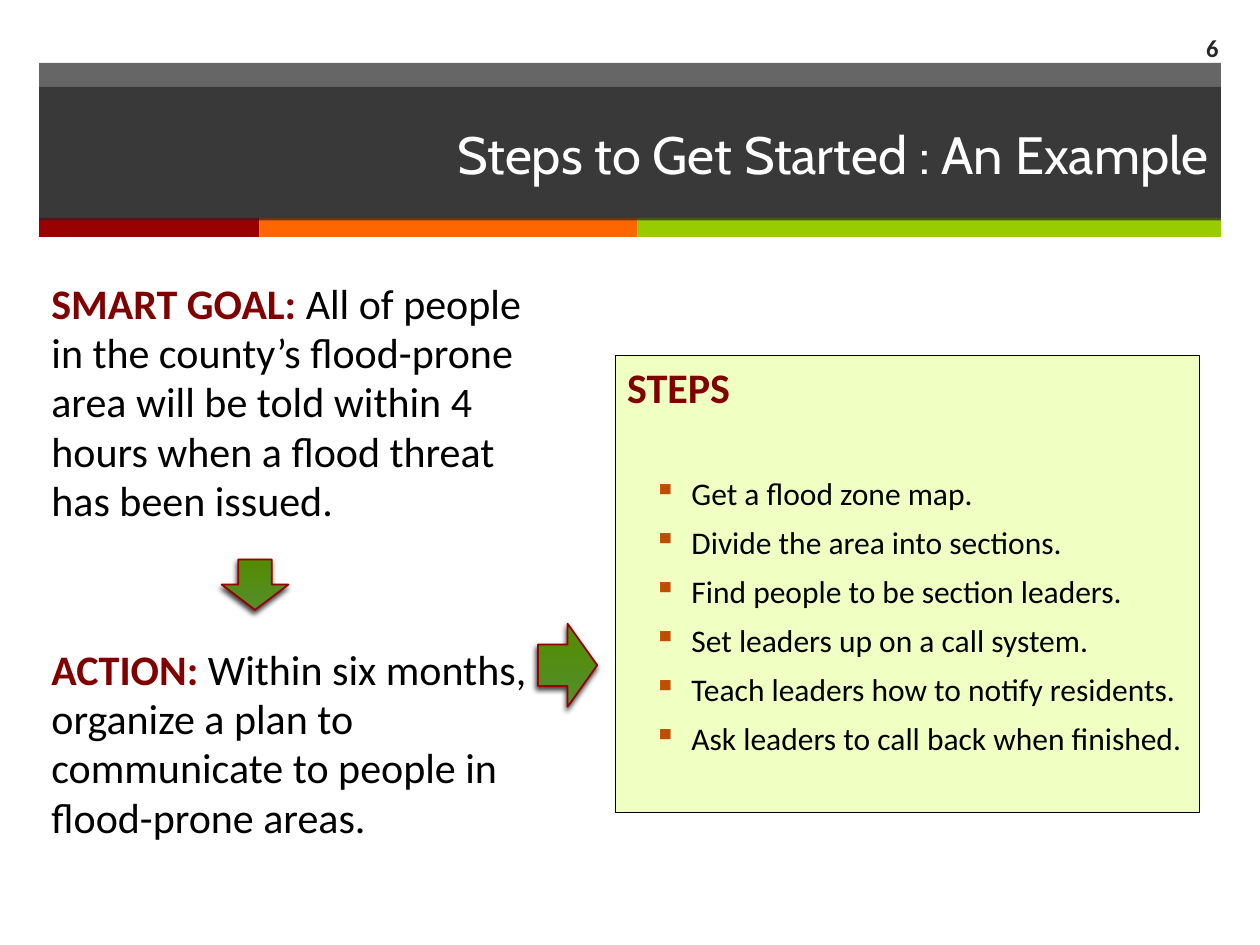
from lxml import etree
from pptx import Presentation
from pptx.dml.color import RGBColor
from pptx.enum.shapes import MSO_SHAPE
from pptx.enum.text import MSO_ANCHOR, PP_ALIGN
from pptx.oxml import parse_xml
from pptx.oxml.ns import qn
from pptx.util import Inches, Pt

RECTANGLE = MSO_SHAPE.RECTANGLE
DOWN_ARROW = MSO_SHAPE.DOWN_ARROW
RIGHT_ARROW = MSO_SHAPE.RIGHT_ARROW
MIDDLE = MSO_ANCHOR.MIDDLE
TOP = MSO_ANCHOR.TOP
LEFT = PP_ALIGN.LEFT
RIGHT = PP_ALIGN.RIGHT
NAMESPACE = "http://schemas.openxmlformats.org/drawingml/2006/main"


def color(value):
    return RGBColor.from_string(value)


def format_run(run, size, value, bold=False, font="Calibri"):
    run.font.name = font
    run.font.size = Pt(size)
    run.font.bold = bold
    run.font.color.rgb = color(value)


presentation = Presentation()
presentation.slide_width = Inches(10)
presentation.slide_height = Inches(7.5)
slide = presentation.slides.add_slide(presentation.slide_layouts[6])
shapes = slide.shapes

bars = [
    (0.31, 0.5, 9.38, 1.24, "262626", 70),
    (0.31, 1.73, 1.75, 0.15, "990000", 100),
    (2.06, 1.73, 3, 0.15, "FF6600", 100),
    (5.06, 1.73, 4.63, 0.15, "99CC00", 100),
    (0.31, 0.69, 9.38, 1.06, "262626", 70),
]
for left, top, width, height, fill, opacity in bars:
    bar = shapes.add_shape(RECTANGLE, Inches(left), Inches(top), Inches(width), Inches(height))
    bar.shadow.inherit = False
    bar.fill.solid()
    bar.fill.fore_color.rgb = color(fill)
    bar.line.fill.background()
    if opacity < 100:
        fill_color = bar._element.spPr.find(qn("a:solidFill"))[0]
        etree.SubElement(fill_color, qn("a:alpha")).set("val", str(opacity * 1000))

title_frame = bar.text_frame
title_frame.text = "Steps to Get Started : An Example"
title_frame.vertical_anchor = MIDDLE
title_frame.paragraphs[0].alignment = RIGHT
format_run(title_frame.paragraphs[0].runs[0], 30, "FFFFFF", font="Cabin")

body = shapes.add_textbox(Inches(0.31), Inches(2.17), Inches(4.16), Inches(4.94))
body_frame = body.text_frame
body_frame.word_wrap = True
statements = [
    ("SMART GOAL: ", "All of people in the county’s flood-prone area will be told "
     "within 4 hours when a flood threat has been issued.", 0),
    ("ACTION: ", "Within six months, organize a plan to communicate to people in "
     "flood-prone areas.", 68),
]
for index, (label, statement, space) in enumerate(statements):
    paragraph = body_frame.add_paragraph() if index else body_frame.paragraphs[0]
    paragraph.space_before = Pt(space)
    paragraph.line_spacing = 0.98
    for text, value, bold in [(label, "800000", True), (statement, "000000", False)]:
        run = paragraph.add_run()
        run.text = text
        format_run(run, 24, value, bold)

number = shapes.add_textbox(Inches(9.08), Inches(0.18), Inches(0.69), Inches(0.39))
number_frame = number.text_frame
number_frame.word_wrap = True
number_frame.vertical_anchor = MIDDLE
number_frame.text = "6"
number_frame.paragraphs[0].alignment = RIGHT
format_run(number_frame.paragraphs[0].runs[0], 14, "262626", True)

panel = shapes.add_shape(RECTANGLE, Inches(4.88), Inches(2.82), Inches(4.64), Inches(3.63))
panel.shadow.inherit = False
panel.fill.solid()
panel.fill.fore_color.rgb = color("F0FFC2")
panel.line.color.rgb = color("000000")
panel.line.width = Pt(0.25)
panel_frame = panel.text_frame
panel_frame.vertical_anchor = TOP
panel_frame.text = "STEPS"
panel_frame.paragraphs[0].alignment = LEFT
format_run(panel_frame.paragraphs[0].runs[0], 24, "800000", True)

steps = [
    "Get a flood zone map.",
    "Divide the area into sections.",
    "Find people to be section leaders.",
    "Set leaders up on a call system.",
    "Teach leaders how to notify residents.",
    "Ask leaders to call back when finished.",
]
for index, step in enumerate(steps):
    paragraph = panel_frame.add_paragraph()
    paragraph.text = step
    paragraph.alignment = LEFT
    paragraph.line_spacing = 1.3
    paragraph.space_before = Pt(0 if index else 29)
    format_run(paragraph.runs[0], 18, "000000")
    properties = paragraph._p.get_or_add_pPr()
    properties.set("marL", str(Inches(0.51)))
    properties.set("indent", str(Inches(-0.3)))
    bullet_color = etree.SubElement(properties, qn("a:buClr"))
    etree.SubElement(bullet_color, qn("a:srgbClr")).set("val", "BF4D00")
    etree.SubElement(properties, qn("a:buChar")).set("char", "▪")

arrows = [
    (DOWN_ARROW, 1.76, 4.44, 0.53, 0.4),
    (RIGHT_ARROW, 4.27, 4.95, 0.47, 0.66),
]
for kind, left, top, width, height in arrows:
    arrow = shapes.add_shape(kind, Inches(left), Inches(top), Inches(width), Inches(height))
    arrow.fill.gradient()
    arrow.fill.gradient_angle = 90
    for stop, value in zip(arrow.fill.gradient_stops, ["548E2B", "528C00"]):
        stop.color.rgb = color(value)
    arrow.line.color.rgb = color("990000")
    arrow.line.width = Pt(1)
    arrow._element.spPr.append(parse_xml(
        f'<a:effectLst xmlns:a="{NAMESPACE}">'
        f'<a:outerShdw blurRad="{Pt(3)}" dist="{Pt(2)}" dir="{110 * 60000}" rotWithShape="0">'
        '<a:srgbClr val="000000"><a:alpha val="75000"/></a:srgbClr>'
        '</a:outerShdw></a:effectLst>'
    ))

presentation.save("out.pptx")
